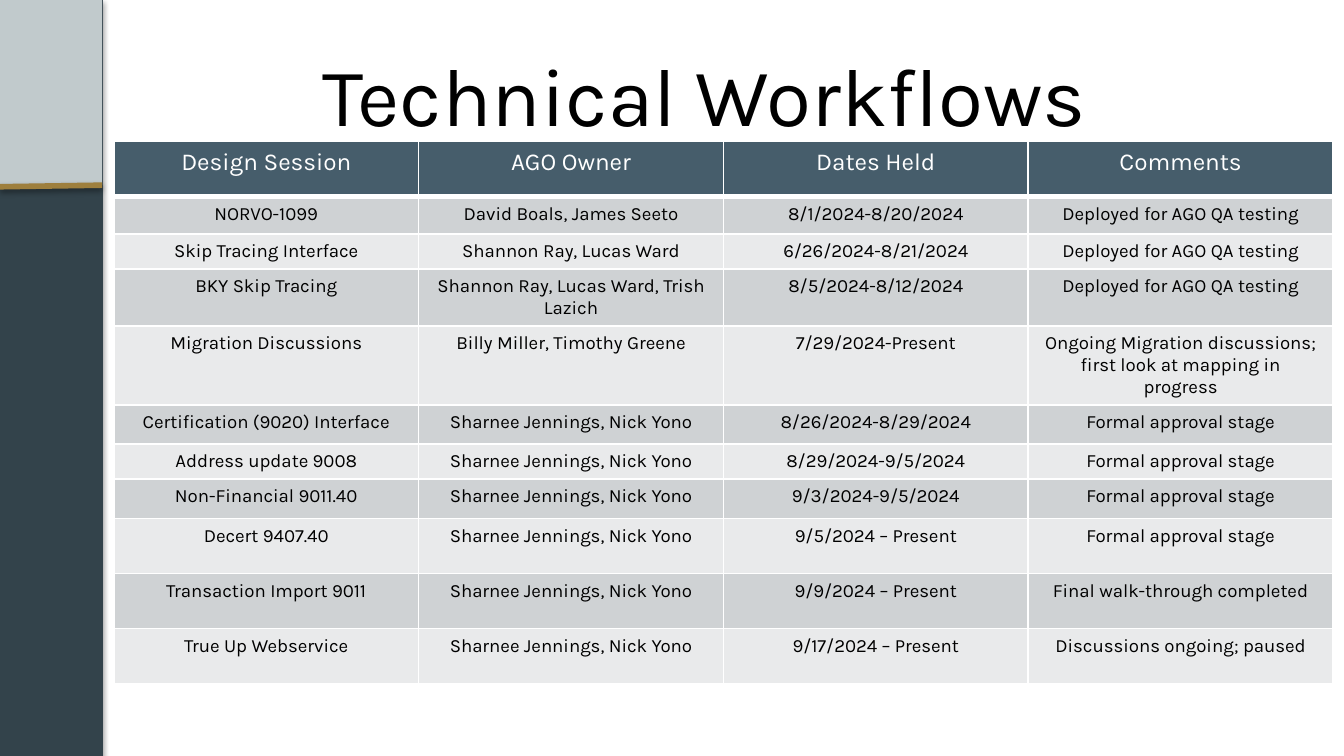
from lxml import etree
from pptx import Presentation
from pptx.dml.color import RGBColor as RGB
from pptx.enum.shapes import MSO_CONNECTOR as LINK, MSO_SHAPE as SHAPE
from pptx.enum.text import MSO_ANCHOR as ANCHOR, MSO_AUTO_SIZE as FIT, PP_ALIGN as ALIGN
from pptx.oxml import parse_xml
from pptx.oxml.ns import nsdecls, qn
from pptx.util import Cm, Pt

FONT = "Karla"
BLACK = RGB(0x00, 0x00, 0x00)
WHITE = RGB(0xFF, 0xFF, 0xFF)
SLATE = RGB(0x33, 0x43, 0x4B)
MIST = RGB(0xC1, 0xCA, 0xCC)
GOLD = RGB(0x9E, 0x7F, 0x3D)
STEEL = RGB(0x46, 0x5D, 0x6B)
DARK = RGB(0xCF, 0xD2, 0xD4)
LIGHT = RGB(0xE9, 0xEA, 0xEB)

TEAM = "Sharnee Jennings, Nick Yono"
TEST = "Deployed for AGO QA testing"
FORMAL = "Formal approval stage"

# Row height in cm, then the four cells
ROWS = [
    (1.04, "Design Session", "AGO Owner", "Dates Held", "Comments"),
    (0.71, "NORVO-1099", "David Boals, James Seeto", "8/1/2024-8/20/2024", TEST),
    (0.56, "Skip Tracing Interface", "Shannon Ray, Lucas Ward", "6/26/2024-8/21/2024", TEST),
    (1.04, "BKY Skip Tracing", "Shannon Ray, Lucas Ward, Trish Lazich", "8/5/2024-8/12/2024", TEST),
    (1.04, "Migration Discussions", "Billy Miller, Timothy Greene", "7/29/2024-Present",
     "Ongoing Migration discussions; first look at mapping in progress"),
    (0.74, "Certification (9020) Interface", TEAM, "8/26/2024-8/29/2024", FORMAL),
    (0.66, "Address update 9008", TEAM, "8/29/2024-9/5/2024", FORMAL),
    (0.74, "Non-Financial 9011.40", TEAM, "9/3/2024-9/5/2024", FORMAL),
    (1.04, "Decert 9407.40", TEAM, "9/5/2024 – Present", FORMAL),
    (1.04, "Transaction Import 9011", TEAM, "9/9/2024 – Present", "Final walk-through completed"),
    (1.04, "True Up Webservice", TEAM, "9/17/2024 – Present", "Discussions ongoing; paused"),
]


def shade(item, alpha, dist):
    """Drop a soft black shadow straight down."""
    item._element.spPr.append(parse_xml(
        f'<a:effectLst {nsdecls("a")}><a:outerShdw blurRad="{Pt(3.1)}" dist="{Pt(dist)}" '
        f'dir="5400000" rotWithShape="0"><a:srgbClr val="{BLACK}">'
        f'<a:alpha val="{alpha * 1000}"/></a:srgbClr></a:outerShdw></a:effectLst>'))


def edge(cell, side, width):
    """Draw one white cell border."""
    line = etree.SubElement(cell._tc.get_or_add_tcPr(), qn(f"a:{side}"), w=str(Pt(width)))
    fill = etree.SubElement(line, qn("a:solidFill"))
    etree.SubElement(fill, qn("a:srgbClr"), val=str(WHITE))


deck = Presentation()
deck.slide_width, deck.slide_height = Cm(25.4), Cm(14.29)
slide = deck.slides.add_slide(deck.slide_layouts[5])
shapes = slide.shapes

# Side bar
bar = shapes.add_shape(SHAPE.RECTANGLE, 0, 0, Cm(1.93), deck.slide_height)
bar.fill.solid()
bar.fill.fore_color.rgb = SLATE
bar.line.color.rgb = SLATE
bar.line.width = Pt(0.75)
shade(bar, 35, 1.8)

block = shapes.add_shape(SHAPE.RECTANGLE, 0, 0, Cm(1.93), Cm(3.5))
block.shadow.inherit = False
block.fill.solid()
block.fill.fore_color.rgb = MIST
block.line.fill.background()

rule = shapes.add_connector(LINK.STRAIGHT, 0, Cm(3.53), Cm(1.93), Cm(3.5))
rule.line.color.rgb = GOLD
rule.line.width = Pt(3)
shade(rule, 38, 1.6)

# Title
title = shapes.title
title.left, title.top = Cm(2.51), Cm(0.58)
title.width, title.height = Cm(21.62), Cm(2.39)
frame = title.text_frame
frame.text = "Technical Workflows"
frame.auto_size = FIT.NONE
frame.vertical_anchor = ANCHOR.MIDDLE
para = frame.paragraphs[0]
para.alignment = ALIGN.CENTER
para.font.name, para.font.size = FONT, Pt(44)
para.font.color.rgb = BLACK

# Table
high = sum(row[0] for row in ROWS)
table = shapes.add_table(len(ROWS), 4, Cm(2.15), Cm(2.67), Cm(23.04), Cm(high)).table
for r, (tall, *words) in enumerate(ROWS):
    table.rows[r].height = Cm(tall)
    head = r == 0
    for c, text in enumerate(words):
        cell = table.cell(r, c)
        cell.text = text
        para = cell.text_frame.paragraphs[0]
        para.alignment = ALIGN.CENTER
        para.font.name, para.font.size = FONT, Pt(13 if head else 10)
        para.font.bold = False
        para.font.color.rgb = WHITE if head else BLACK
        for side in ("lnL", "lnR", "lnT", "lnB"):
            thick = (head and side == "lnB") or (r == 1 and side == "lnT")
            edge(cell, side, 3 if thick else 1)
        cell.fill.solid()
        cell.fill.fore_color.rgb = STEEL if head else DARK if r % 2 else LIGHT

deck.save("out.pptx")
